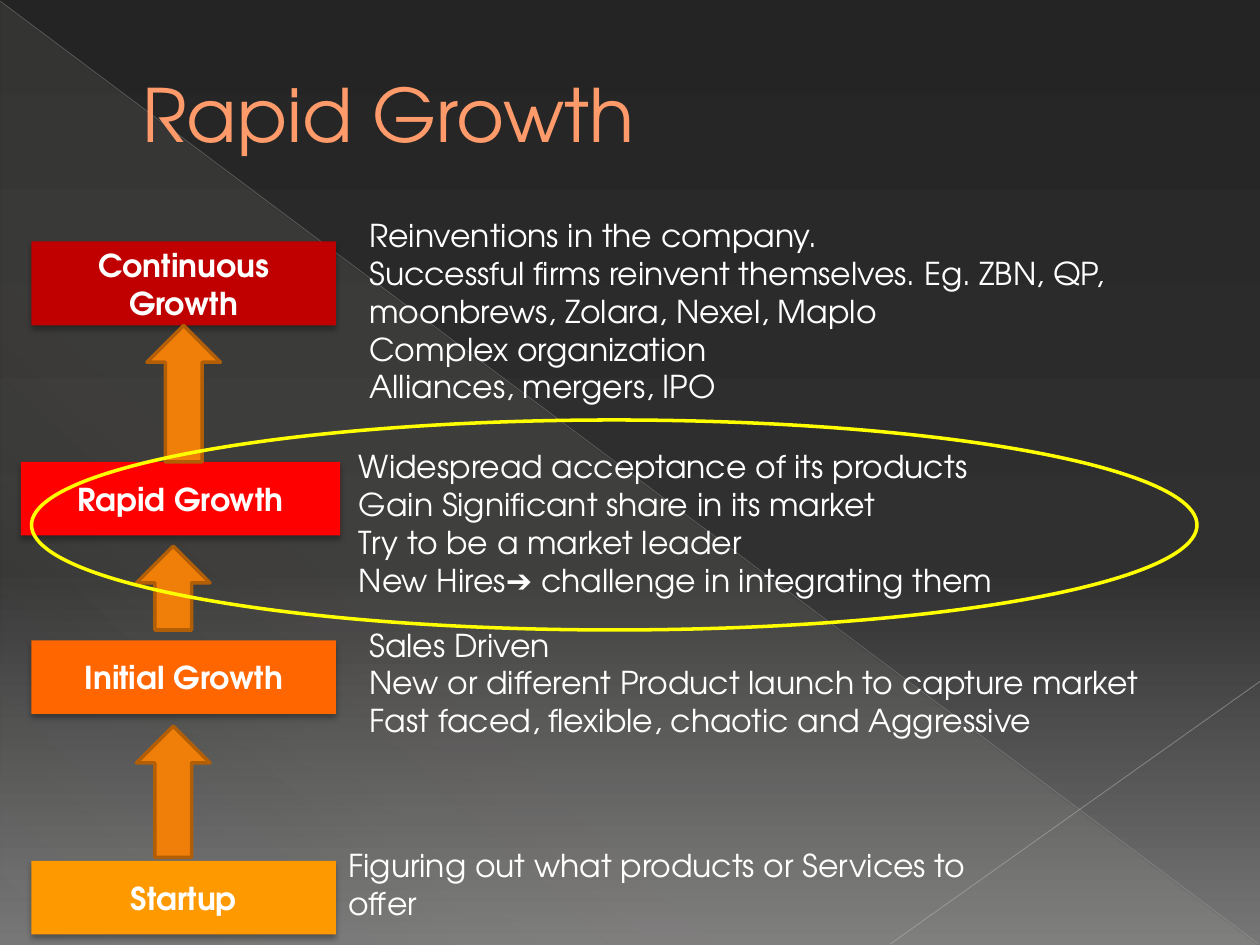
from dataclasses import dataclass

from lxml import etree
from pptx import Presentation
from pptx.dml.color import RGBColor
from pptx.enum.shapes import MSO_CONNECTOR, MSO_SHAPE
from pptx.enum.text import MSO_ANCHOR, MSO_AUTO_SIZE, PP_ALIGN
from pptx.oxml.ns import qn
from pptx.util import Inches, Pt

CENTER, LEFT = PP_ALIGN.CENTER, PP_ALIGN.LEFT
MIDDLE, TOP = MSO_ANCHOR.MIDDLE, MSO_ANCHOR.TOP
GROW = MSO_AUTO_SIZE.SHAPE_TO_FIT_TEXT
STRAIGHT = MSO_CONNECTOR.STRAIGHT
CELLS_PER_INCH = 12  # the slide is 120 columns by 90 rows
COLUMNS, ROWS = 120, 90
ARROW_THICKNESS = 7


@dataclass(frozen=True)
class Theme:
    font: str = "TeX Gyre Adventor"
    title_size: int = 42
    text_size: int = 18
    title: str = "FF9B6A"
    title_edge: str = "A65806"
    text: str = "FFFFFF"
    arrow: str = "F07F09"
    arrow_edge: str = "B25E07"
    highlight: str = "FFFF00"
    shadow: str = "000000"
    # Gradient stops: position in percent, colour, opacity in percent
    backdrop: tuple = ((0, "242424", 100), (60, "303030", 100), (100, "767676", 100))
    glow: tuple = ((0, "E3DED1", 10), (70, "E3DED1", 8), (100, "E3DED1", 1))


@dataclass(frozen=True)
class Area:
    column: float
    row: float
    columns: float
    rows: float

    def lengths(self):
        return [cells(n) for n in (self.column, self.row, self.columns, self.rows)]


@dataclass(frozen=True)
class Stage:
    name: str
    color: str
    box: Area
    traits_box: Area
    traits: tuple


@dataclass(frozen=True)
class Arrow:
    """An upward arrow, placed by its centre."""
    column: float
    row: float
    length: float


@dataclass(frozen=True)
class Ray:
    start: tuple
    end: tuple
    color: str
    width: float
    opacity: int


THEME = Theme()

STAGES = (
    Stage("Startup", "FF9900", Area(3, 82, 29, 7), Area(32, 80, 62.2, 8.5),
          ("Figuring out what products or Services to offer",)),
    Stage("Initial Growth", "FF6600", Area(3, 61, 29, 7), Area(34, 59, 84, 12.1),
          ("Sales Driven",
           "New or different Product launch to capture market",
           "Fast faced, flexible, chaotic and Aggressive")),
    Stage("Rapid Growth", "FF0000", Area(2, 44, 30.4, 7), Area(33, 42, 84, 15.7),
          ("Widespread acceptance of its products",
           "Gain Significant share in its market",
           "Try to be a market leader",
           "New Hires➔ challenge in integrating them")),
    Stage("Continuous Growth", "C00000", Area(3, 23, 29, 8), Area(34, 20, 84, 19.4),
          ("Reinventions in the company.",
           "Successful firms reinvent themselves. Eg. ZBN, QP, "
           "moonbrews, Zolara, Nexel, Maplo",
           "Complex organization",
           "Alliances, mergers, IPO")),
)
ARROWS = (Arrow(16.5, 75.4, 12.5), Arrow(16.5, 56, 8), Arrow(17.5, 37.5, 13))
RAYS = (
    Ray((0, 0.1), (119.9, 89.9), "B6B6B6", 0.39, 35),
    Ray((120, 64.9), (84.8, 89.9), "BFBFBF", 0.47, 45),
)


def cells(count: float) -> int:
    return Inches(count / CELLS_PER_INCH)


def rgb(color: str) -> RGBColor:
    return RGBColor.from_string(color)


def add_node(parent, tag: str, **attributes):
    return etree.SubElement(parent, qn(tag), {k: str(v) for k, v in attributes.items()})


def add_color(parent, color: str, opacity: int = 100) -> None:
    node = add_node(parent, "a:srgbClr", val=color)
    if opacity < 100:
        add_node(node, "a:alpha", val=opacity * 1000)


def set_gradient(properties, stops: tuple, angle: int) -> None:
    """Replace the solid fill inside properties by a linear gradient."""
    gradient = etree.Element(qn("a:gradFill"), rotWithShape="1")
    stop_list = add_node(gradient, "a:gsLst")
    for position, color, opacity in stops:
        add_color(add_node(stop_list, "a:gs", pos=position * 1000), color, opacity)
    add_node(gradient, "a:lin", ang=angle * 60000, scaled=0)
    properties.replace(properties.find(qn("a:solidFill")), gradient)


def add_span(para, text: str, size: int, color: str, bold: bool = False):
    span = para.add_run()
    span.text = text
    span.font.name = THEME.font
    span.font.size = Pt(size)
    span.font.bold = bold
    span.font.color.rgb = rgb(color)
    return span


def add_figure(page, kind, area: Area, fill: str = "", edge: str = ""):
    shape = page.shapes.add_shape(kind, *area.lengths())
    shape.shadow.inherit = False
    if fill:
        shape.fill.solid()
        shape.fill.fore_color.rgb = rgb(fill)
    else:
        shape.fill.background()
    if edge:
        shape.line.color.rgb = rgb(edge)
        shape.line.width = Pt(2)
    else:
        shape.line.fill.background()
    return shape


def draw_backdrop(page) -> None:
    page.background.fill.solid()
    set_gradient(page.element.find(".//" + qn("p:bgPr")), THEME.backdrop, 90)
    glow = add_figure(page, MSO_SHAPE.RIGHT_TRIANGLE,
                      Area(0.1, 0.2, COLUMNS - 0.2, ROWS - 0.2), THEME.glow[0][1])
    set_gradient(glow.element.spPr, THEME.glow, 133)
    for ray in RAYS:
        line = page.shapes.add_connector(
            STRAIGHT, *(cells(n) for n in ray.start + ray.end))
        line.line.color.rgb = rgb(ray.color)
        line.line.width = Pt(ray.width)
        properties = line.element.spPr
        add_node(properties.find(".//" + qn("a:srgbClr")), "a:alpha",
                 val=ray.opacity * 1000)
        add_node(properties, "a:effectLst")


def draw_title(page, text: str) -> None:
    title = page.shapes.title
    title.left, title.top, title.width, title.height = Area(6, 3.5, 108, 14.5).lengths()
    title.text_frame.vertical_anchor = MIDDLE
    para = title.text_frame.paragraphs[0]
    para.alignment = LEFT
    para._p.get_or_add_pPr().set("marL", str(Inches(0.53)))
    span = add_span(para, text, THEME.title_size, THEME.title)
    edge = etree.Element(qn("a:ln"), w=str(Pt(0.5)))
    add_color(add_node(edge, "a:solidFill"), THEME.title_edge)
    span._r.get_or_add_rPr().insert(0, edge)
    page.shapes.element.append(title.element)  # in front of the backdrop


def draw_stage(page, stage: Stage) -> None:
    box = add_figure(page, MSO_SHAPE.RECTANGLE, stage.box, stage.color)
    shadow = add_node(box.element.spPr.find(qn("a:effectLst")), "a:outerShdw",
                      blurRad=Pt(3.5), dist=Pt(2.2), dir=90 * 60000, rotWithShape=0)
    add_color(shadow, THEME.shadow, 32)
    box.text_frame.word_wrap = True
    box.text_frame.vertical_anchor = MIDDLE
    para = box.text_frame.paragraphs[0]
    para.alignment = CENTER
    add_span(para, stage.name, THEME.text_size, THEME.text, bold=True)

    frame = page.shapes.add_textbox(*stage.traits_box.lengths()).text_frame
    frame.word_wrap = True
    frame.auto_size = GROW
    frame.vertical_anchor = TOP
    for index, trait in enumerate(stage.traits):
        para = frame.add_paragraph() if index else frame.paragraphs[0]
        add_span(para, trait, THEME.text_size, THEME.text)


def draw_arrow(page, arrow: Arrow) -> None:
    area = Area(arrow.column - arrow.length / 2, arrow.row - ARROW_THICKNESS / 2,
                arrow.length, ARROW_THICKNESS)
    shape = add_figure(page, MSO_SHAPE.RIGHT_ARROW, area, THEME.arrow, THEME.arrow_edge)
    shape.rotation = 270


def main() -> None:
    deck = Presentation()
    deck.slide_width, deck.slide_height = cells(COLUMNS), cells(ROWS)
    page = deck.slides.add_slide(deck.slide_layouts.get_by_name("Title Only"))
    draw_backdrop(page)
    draw_title(page, "Rapid Growth")
    for stage in STAGES:
        draw_stage(page, stage)
    for arrow in ARROWS:
        draw_arrow(page, arrow)
    add_figure(page, MSO_SHAPE.OVAL, Area(3, 40, 111, 20), edge=THEME.highlight)
    deck.save("out.pptx")


if __name__ == "__main__":
    main()
